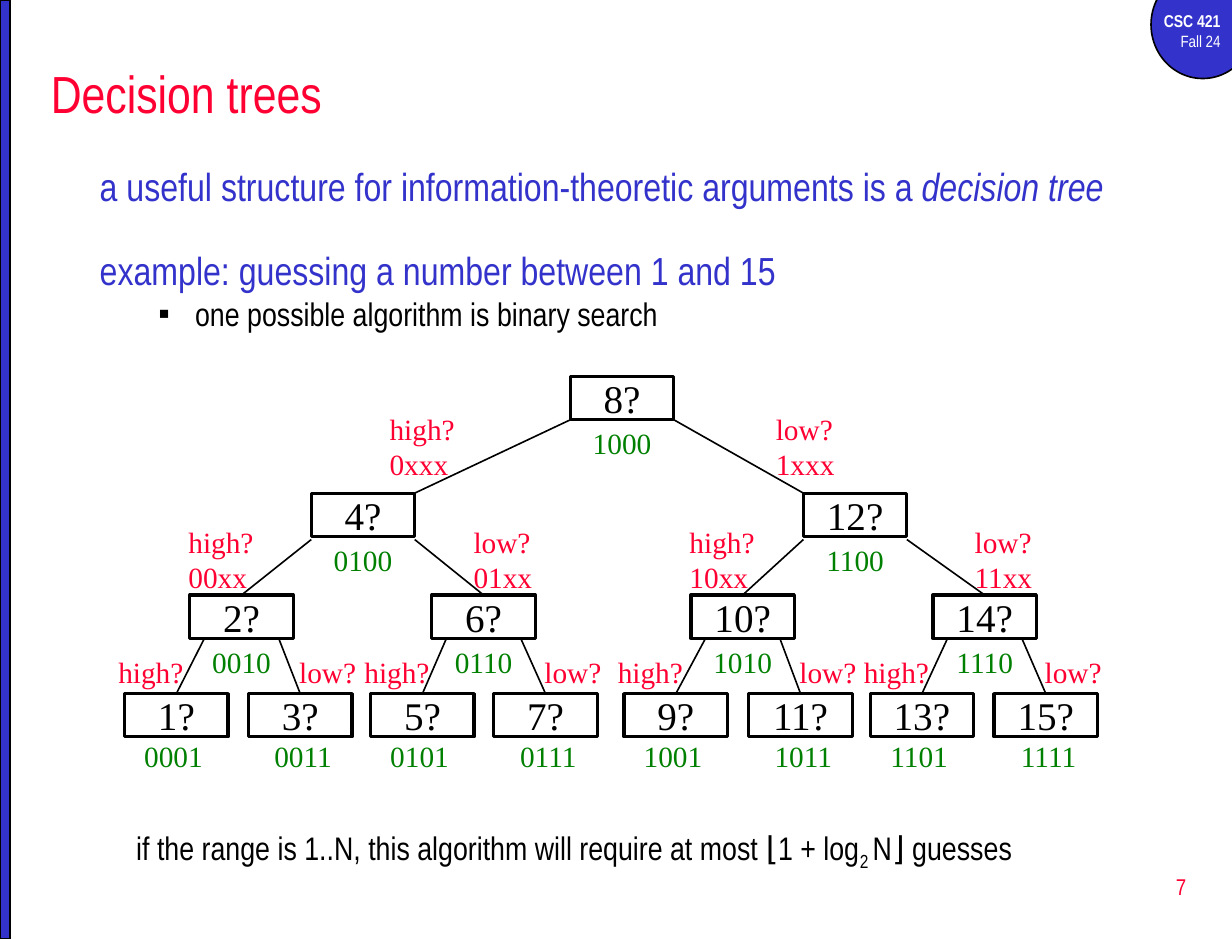
"""Build the slide on decision trees for guessing a number from 1 to 15."""
from lxml import etree
from pptx import Presentation
from pptx import util as u
from pptx.dml.color import RGBColor
from pptx.enum import shapes, text
from pptx.oxml import ns

Pt = u.Pt
BLUE = RGBColor(0x33, 0x33, 0xCC)
RED = RGBColor(0xFF, 0x00, 0x33)
GREEN = RGBColor(0x00, 0x80, 0x00)
BLACK = RGBColor(0x00, 0x00, 0x00)
WHITE = RGBColor(0xFF, 0xFF, 0xFF)
NARROW = "Arial Narrow"
SERIF = "Times New Roman"
LEFT, CENTER, RIGHT = text.PP_ALIGN.LEFT, text.PP_ALIGN.CENTER, text.PP_ALIGN.RIGHT


def add_span(para, words, size, color, font=NARROW):
    span = para.add_run()
    span.text = words
    span.font.size = Pt(size)
    span.font.name = font
    span.font.color.rgb = color
    return span


def add_label(left, top, width, height, lines, color, align):
    box = page.shapes.add_textbox(Pt(left), Pt(top), Pt(width), Pt(height))
    frame = box.text_frame
    frame.word_wrap = True
    for index, words in enumerate(lines):
        para = frame.add_paragraph() if index else frame.paragraphs[0]
        para.alignment = align
        add_span(para, words, 18, color, SERIF)


deck = Presentation()
deck.slide_width, deck.slide_height = Pt(756), Pt(576)
page = deck.slides.add_slide(deck.slide_layouts[1])

for kind, left, top, width, height in (
    (shapes.MSO_SHAPE.OVAL, 706.3, -18, 63.4, 66.2),
    (shapes.MSO_SHAPE.RECTANGLE, 0, 0, 6, 576),
):
    accent = page.shapes.add_shape(kind, Pt(left), Pt(top), Pt(width), Pt(height))
    accent.shadow.inherit = False
    accent.fill.solid()
    accent.fill.fore_color.rgb = BLUE
    accent.line.color.rgb = BLACK
    accent.line.width = Pt(1)

course = page.shapes.add_textbox(Pt(696), Pt(3), Pt(60), Pt(33)).text_frame
course.word_wrap = True
para = course.paragraphs[0]
para.alignment = RIGHT
add_span(para, "CSC 421", 10.5, WHITE).font.bold = True
para = course.add_paragraph()
para.alignment = RIGHT
add_span(para, "Fall 24", 10, WHITE)

title = page.shapes.title
title.left, title.top, title.width, title.height = Pt(24), Pt(30), Pt(714), Pt(54)
title.text_frame.vertical_anchor = text.MSO_ANCHOR.MIDDLE
title.text_frame.auto_size = text.MSO_AUTO_SIZE.NONE
para = title.text_frame.paragraphs[0]
para.alignment = LEFT
add_span(para, "Decision trees", 32, RED)

body = page.placeholders[1]
body.left, body.top, body.width, body.height = Pt(54), Pt(96), Pt(685), Pt(123)
frame = body.text_frame
frame.auto_size = text.MSO_AUTO_SIZE.NONE
intro, example, detail = frame.paragraphs[0], frame.add_paragraph(), frame.add_paragraph()
detail.level = 1
detail.line_spacing = 0.8
for para, margin, hang, before, bullet in (
    (intro, 27, 27, 4, None),
    (example, 27, 27, 22.5, None),
    (detail, 58.5, 22.5, 5, "▪"),
):
    para.alignment = LEFT
    para.space_before = Pt(before)
    props = para._p.get_or_add_pPr()
    props.set("marL", str(Pt(margin)))
    props.set("indent", str(-Pt(hang)))
    mark = etree.SubElement(props, ns.qn("a:buChar" if bullet else "a:buNone"))
    if bullet:
        mark.set("char", bullet)
add_span(intro, "a useful structure for information-theoretic arguments is a ", 24, BLUE)
add_span(intro, "decision tree", 24, BLUE).font.italic = True
add_span(example, "example: guessing a number between 1 and 15", 24, BLUE)
add_span(detail, "one possible algorithm is binary search", 20, BLACK)

NODE_WIDTH, NODE_HEIGHT = 63.5, 26.5
TOPS = (231, 302.5, 365, 425.5)
LEFTS = (
    (350,),
    (191, 493),
    (116.5, 265, 424, 572.5),
    (76.5, 152.5, 227.5, 303, 383, 459.5, 534, 610),
)
EDGE_INSETS = (0, 0, 9)
EDGE_DROPS = (0, 2, 0)
ANSWER_TOPS = (248.5, 318, 398)
ANSWER_SHIFTS = ((41, -24), (-8, 18.5), (-11, 24))

for level in range(3):
    for child, child_left in enumerate(LEFTS[level + 1]):
        low = child % 2
        start = LEFTS[level][child // 2] + EDGE_INSETS[level]
        if low:
            start += NODE_WIDTH - 2 * EDGE_INSETS[level]
        reach = NODE_WIDTH / 2 if level else NODE_WIDTH * (1 - low)
        edge = page.shapes.add_connector(
            shapes.MSO_CONNECTOR.STRAIGHT,
            Pt(start), Pt(TOPS[level] + NODE_HEIGHT + EDGE_DROPS[level]),
            Pt(child_left + reach), Pt(TOPS[level + 1]),
        )
        edge.line.color.rgb = BLACK
        edge.line.width = Pt(1)
        etree.SubElement(edge._element.spPr, ns.qn("a:effectLst"))

        lines = ["low?" if low else "high?"]
        if level < 2:
            lines.append(format(child, f"0{level + 1}b") + "x" * (3 - level))
        add_label(child_left + ANSWER_SHIFTS[level][low], ANSWER_TOPS[level],
                  63, 14 + 14 * len(lines), lines, RED, LEFT)

for level, (top, lefts) in enumerate(zip(TOPS, LEFTS)):
    for index, left in enumerate(lefts):
        guess = (8 >> level) * (2 * index + 1)
        node = page.shapes.add_shape(
            shapes.MSO_SHAPE.RECTANGLE, Pt(left), Pt(top), Pt(NODE_WIDTH), Pt(NODE_HEIGHT))
        node.shadow.inherit = False
        node.fill.solid()
        node.fill.fore_color.rgb = WHITE
        node.line.color.rgb = BLACK
        node.line.width = Pt(2)
        frame = node.text_frame
        frame.word_wrap = False
        frame.margin_top = frame.margin_bottom = 0
        frame.vertical_anchor = text.MSO_ANCHOR.MIDDLE
        frame.paragraphs[0].alignment = CENTER
        add_span(frame.paragraphs[0], f"{guess}?", 24, BLACK, SERIF)

        leaf = level == 3
        code_left = left - 3.5 if leaf and index % 2 == 0 else left
        code_top = top + NODE_HEIGHT - (3 if leaf else 0)
        add_label(code_left, code_top, 67 if leaf else NODE_WIDTH, 28,
                  [format(guess, "04b")], GREEN, CENTER)

summary = page.shapes.add_textbox(Pt(76.5), Pt(504), Pt(600), Pt(31.5)).text_frame
summary.word_wrap = True
para = summary.paragraphs[0]
add_span(para, "if the range is 1..N, this algorithm will require at most ⌊1 + log", 20, BLACK)
base = add_span(para, "2 ", 20, BLACK)
base.font._element.set("baseline", "-25000")
add_span(para, "N⌋ guesses", 20, BLACK)

number = page.shapes.add_textbox(Pt(577.5), Pt(525), Pt(157.5), Pt(38)).text_frame
number.word_wrap = True
number.vertical_anchor = text.MSO_ANCHOR.MIDDLE
number.paragraphs[0].alignment = RIGHT
add_span(number.paragraphs[0], "7", 14, RED)

deck.save("out.pptx")
